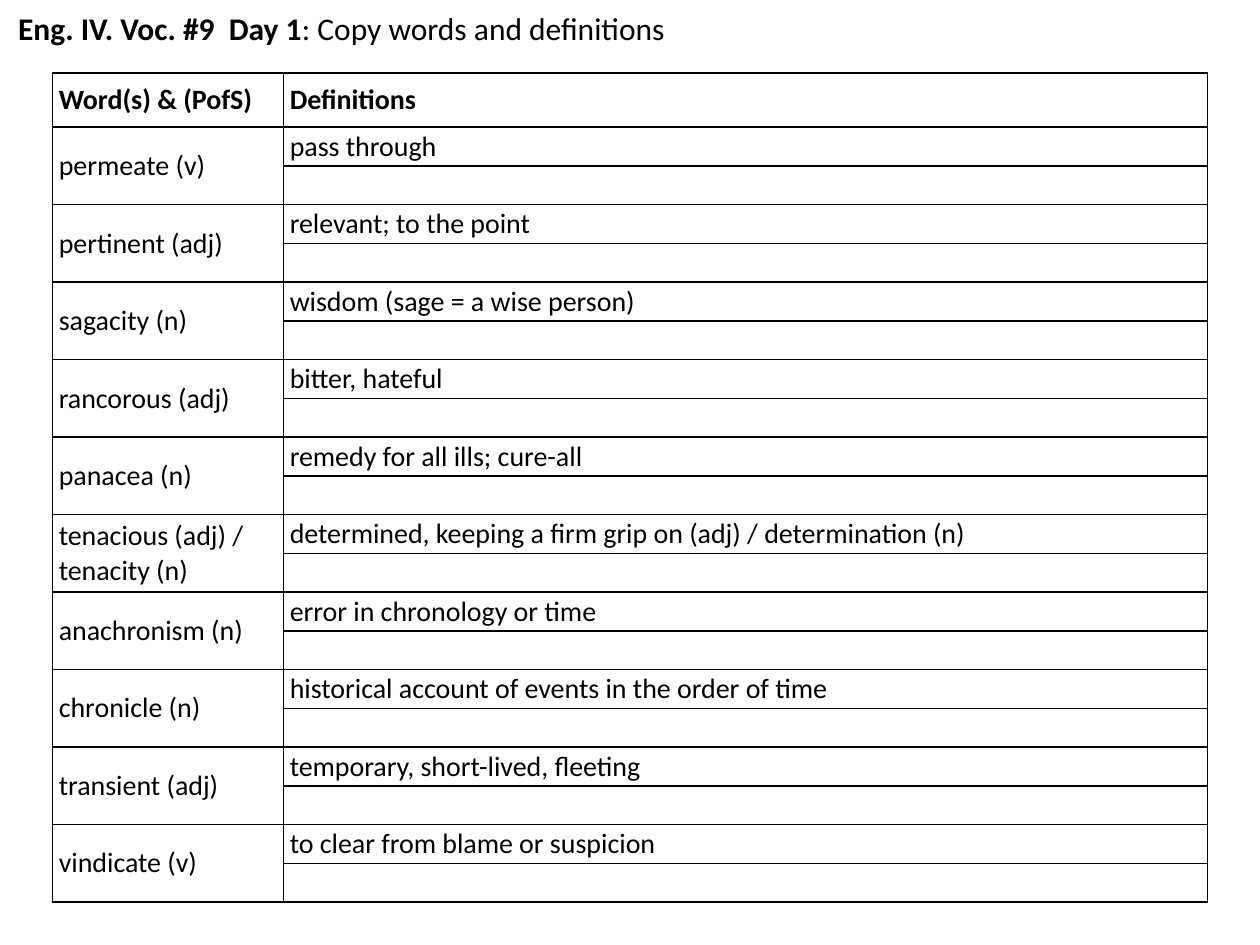
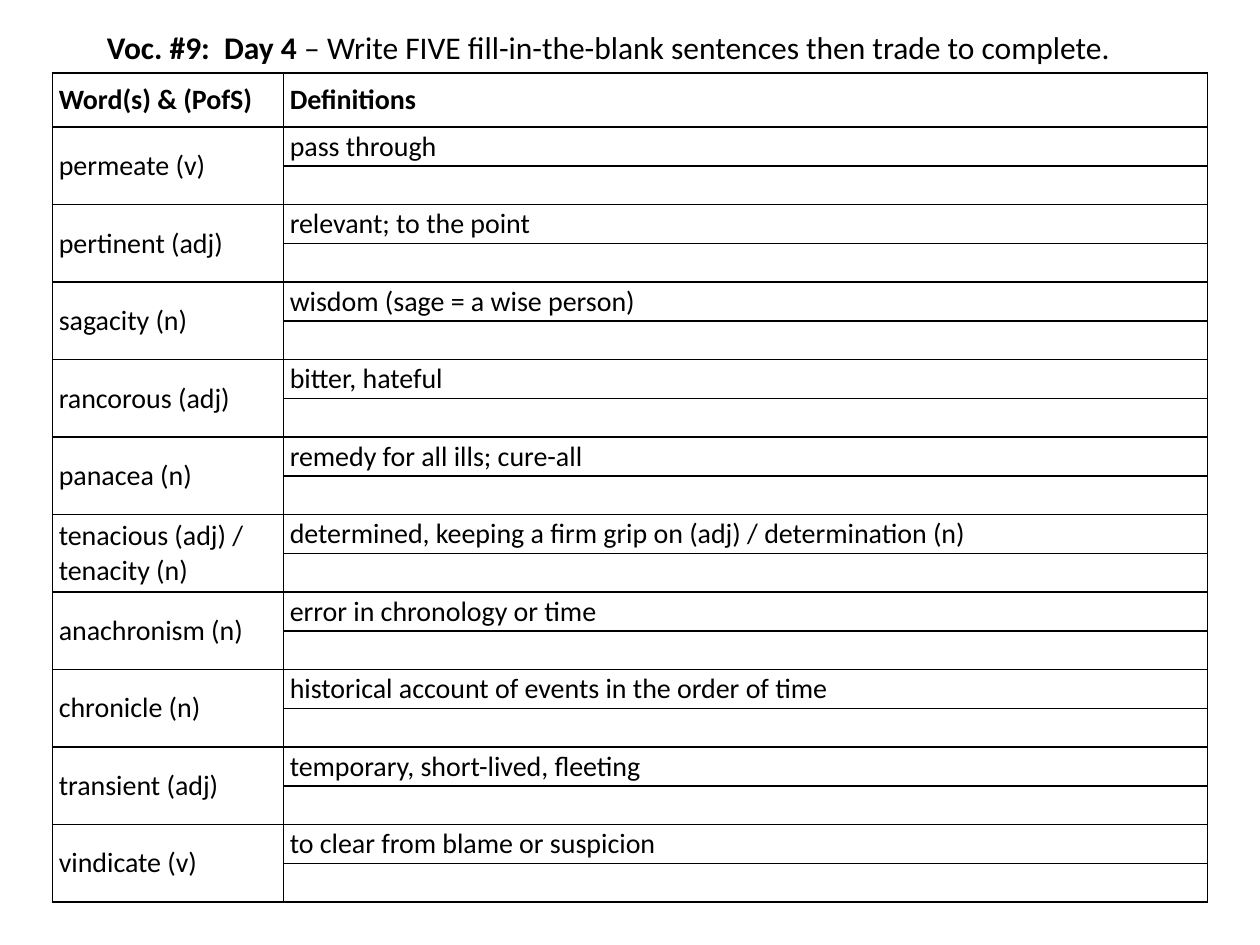
import lxml.etree
import pptx
import pptx.dml.color
import pptx.enum.text
import pptx.oxml.ns
import pptx.util

INK = "000000"
PAPER = "FFFFFF"
FONT = "Calibri"
HEADINGS = ["Word(s) & (PofS)", "Definitions"]
VOCABULARY = [
    ("permeate (v)", "pass through"),
    ("pertinent (adj)", "relevant; to the point"),
    ("sagacity (n)", "wisdom (sage = a wise person)"),
    ("rancorous (adj)", "bitter, hateful"),
    ("panacea (n)", "remedy for all ills; cure-all"),
    ("tenacious (adj) /\ntenacity (n)", "determined, keeping a firm grip on (adj) / determination (n)"),
    ("anachronism (n)", "error in chronology or time"),
    ("chronicle (n)", "historical account of events in the order of time"),
    ("transient (adj)", "temporary, short-lived, fleeting"),
    ("vindicate (v)", "to clear from blame or suspicion"),
]
CENTER = pptx.enum.text.PP_ALIGN.CENTER
LEFT = pptx.enum.text.PP_ALIGN.LEFT
MIDDLE = pptx.enum.text.MSO_ANCHOR.MIDDLE

SLIDES = [
    {"runs": [("Eng. IV. Voc. #9  Day 1", True), (": Copy words and definitions", False)],
     "box": (0, 0, 5.42, 0.45), "align": CENTER, "indent": 0},
    {"runs": [("Voc. #9:  Day 4 ", True),
              ("– Write FIVE fill-in-the-blank sentences then trade to complete.", False)],
     "box": (0.25, 0.17, 8.83, 0.4), "align": LEFT, "indent": 0.5},
]


def color(hex_string):
    return pptx.dml.color.RGBColor.from_string(hex_string)


def write(paragraph, text, size=16, bold=False, ink=INK, align=LEFT):
    paragraph.alignment = align
    run = paragraph.add_run()
    run.text = text
    run.font.name = FONT
    run.font.size = pptx.util.Pt(size)
    run.font.bold = bold
    run.font.color.rgb = color(ink)


presentation = pptx.Presentation()
presentation.slide_width = pptx.util.Inches(10)
presentation.slide_height = pptx.util.Inches(7.5)

grid_column = presentation.slide_width / 24
table_width = int(22 * grid_column)
table_top = pptx.util.Inches(0.58)
table_height = pptx.util.Inches(6.58)
heading_height = pptx.util.Inches(0.43)
line_count = 2 * len(VOCABULARY)
line_height = (table_height - heading_height) // line_count

for content in SLIDES:
    slide = presentation.slides.add_slide(presentation.slide_layouts[6])
    slide.background.fill.solid()
    slide.background.fill.fore_color.rgb = color(PAPER)

    table = slide.shapes.add_table(
        line_count + 1, 2, int(grid_column), table_top, table_width, table_height).table
    table.first_row = False
    table.horz_banding = False
    table.columns[0].width = table_width // 5
    table.columns[1].width = table_width * 4 // 5
    for row in table.rows:
        row.height = line_height
    table.rows[0].height = heading_height

    for cell in table.iter_cells():
        cell.margin_left = cell.margin_right = pptx.util.Inches(0.05)
        cell.margin_top = cell.margin_bottom = 0
        cell.vertical_anchor = MIDDLE
        properties = cell._tc.get_or_add_tcPr()
        for side in ("a:lnL", "a:lnR", "a:lnT", "a:lnB"):
            border = lxml.etree.SubElement(
                properties, pptx.oxml.ns.qn(side), w=str(pptx.util.Pt(1)))
            border_fill = lxml.etree.SubElement(border, pptx.oxml.ns.qn("a:solidFill"))
            lxml.etree.SubElement(border_fill, pptx.oxml.ns.qn("a:srgbClr"), val=INK)
        cell.fill.background()

    for column, heading in enumerate(HEADINGS):
        write(table.cell(0, column).text_frame.paragraphs[0], heading, bold=True)

    for index, (word, definition) in enumerate(VOCABULARY):
        line = 2 * index + 1
        word_cell = table.cell(line, 0)
        word_cell.merge(table.cell(line + 1, 0))
        for part, word_form in enumerate(word.split("\n")):
            frame = word_cell.text_frame
            write(frame.add_paragraph() if part else frame.paragraphs[0], word_form)
        write(table.cell(line, 1).text_frame.paragraphs[0], definition)

    title = slide.shapes.add_textbox(*[pptx.util.Inches(length) for length in content["box"]])
    title.text_frame.word_wrap = True
    title.text_frame.vertical_anchor = MIDDLE
    title_paragraph = title.text_frame.paragraphs[0]
    title_paragraph._p.get_or_add_pPr().set("indent", str(pptx.util.Inches(content["indent"])))
    for text, bold in content["runs"]:
        write(title_paragraph, text, size=18, bold=bold, align=content["align"])

presentation.save("out.pptx")
